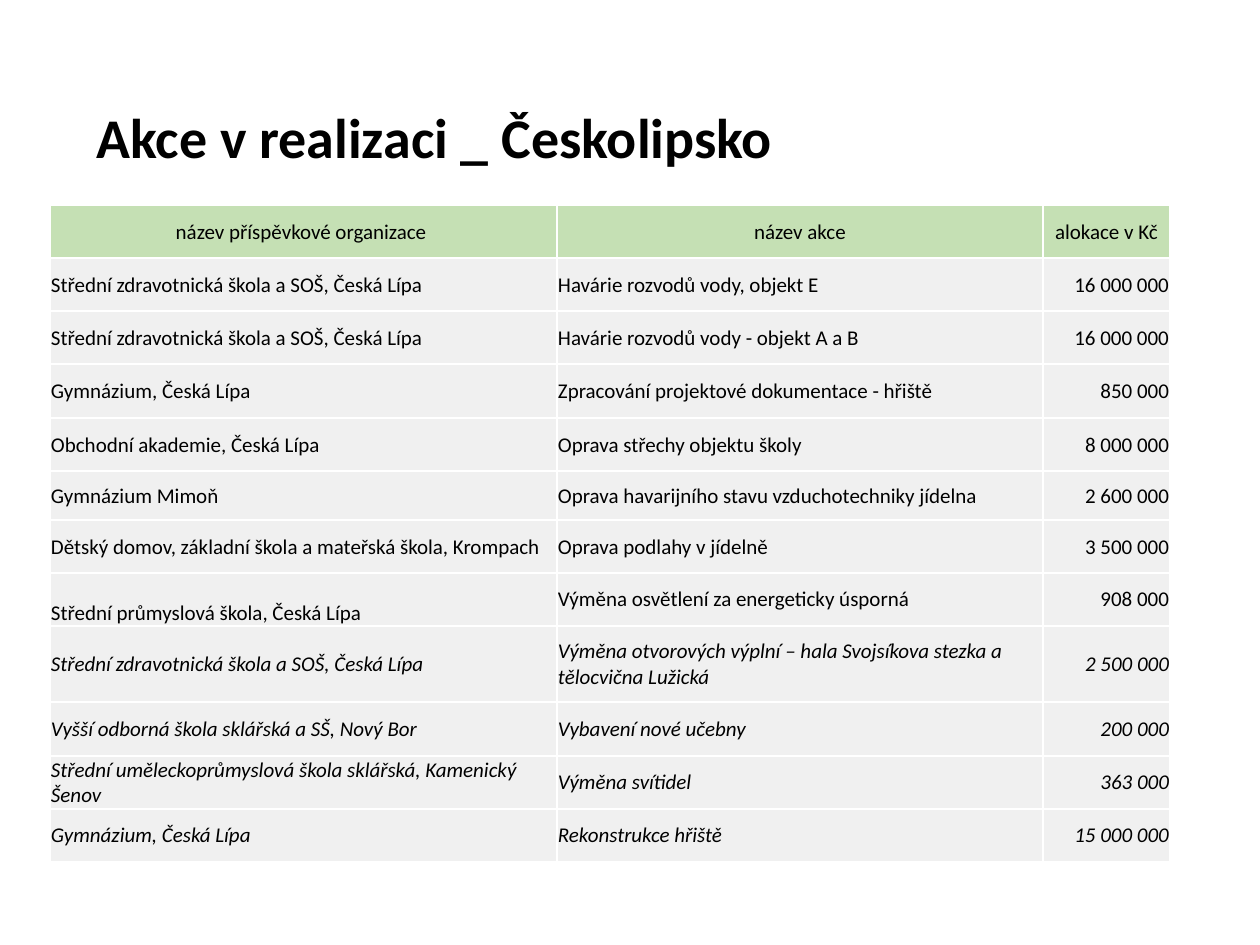
"""Build the slide listing projects under way in the Česká Lípa region."""
from lxml import etree
from pptx import Presentation
from pptx import util as u
from pptx.dml.color import RGBColor
from pptx.enum import text
from pptx.oxml.ns import qn

TITLE = "Akce v realizaci _ Českolipsko"
HEAD = ("název příspěvkové organizace ", "název akce", "alokace v Kč")
ACTIVE = [
    ("Střední zdravotnická škola a SOŠ, Česká Lípa", "Havárie rozvodů vody, objekt E", "16 000 000"),
    ("Střední zdravotnická škola a SOŠ, Česká Lípa", "Havárie rozvodů vody - objekt A a B", "16 000 000"),
    ("Gymnázium, Česká Lípa", "Zpracování projektové dokumentace - hřiště", "850 000"),
    ("Obchodní akademie, Česká Lípa", "Oprava střechy objektu školy", "8 000 000"),
    ("Gymnázium Mimoň", "Oprava havarijního stavu vzduchotechniky jídelna", "2 600 000"),
    ("Dětský domov, základní škola a mateřská škola, Krompach", "Oprava podlahy v jídelně", "3 500 000"),
    ("Střední průmyslová škola, Česká Lípa", "Výměna osvětlení za energeticky úsporná", "908 000"),
]
PLANNED = [
    ("Střední zdravotnická škola a SOŠ, Česká Lípa",
     "Výměna otvorových výplní – hala Svojsíkova stezka a tělocvična Lužická", "2 500 000"),
    ("Vyšší odborná škola sklářská a SŠ, Nový Bor", "Vybavení nové učebny", "200 000"),
    ("Střední uměleckoprůmyslová škola sklářská, Kamenický Šenov", "Výměna svítidel", "363 000"),
    ("Gymnázium, Česká Lípa", "Rekonstrukce hřiště", "15 000 000"),
]
ROWS = [HEAD] + ACTIVE + PLANNED
WIDTHS = (507, 486, 127)
HEIGHTS = (53, 53, 53, 54, 53, 49, 53, 53, 76, 54, 53, 53)
LOW = (7, 0)
LEFT, CENTER, RIGHT = text.PP_ALIGN.LEFT, text.PP_ALIGN.CENTER, text.PP_ALIGN.RIGHT


def px(n):
    return u.Emu(round(n * 914400 / 126))


def color(code):
    return RGBColor.from_string(code)


def write(frame, words, size=12, bold=False, italic=False, align=LEFT):
    frame.word_wrap = True
    para = frame.paragraphs[0]
    para.alignment = align
    run = para.add_run()
    run.text = words
    font = run.font
    font.name, font.size, font.bold, font.italic = "Calibri", u.Pt(size), bold, italic
    font.color.rgb = color("000000")


def edge(cell, code):
    props = cell._tc.get_or_add_tcPr()
    for spot, side in enumerate(("lnL", "lnR", "lnT", "lnB")):
        line = etree.Element(qn("a:" + side), w=str(u.Pt(1)))
        fill = etree.SubElement(line, qn("a:solidFill"))
        etree.SubElement(fill, qn("a:srgbClr"), val=code)
        props.insert(spot, line)


def main():
    deck = Presentation()
    deck.slide_width, deck.slide_height = px(1260), px(945)
    slide = deck.slides.add_slide(deck.slide_layouts[6])

    title = slide.shapes.add_textbox(px(84), px(96), px(1052), px(81))
    write(title.text_frame, TITLE, size=32, bold=True)

    table = slide.shapes.add_table(len(ROWS), len(WIDTHS), px(50), px(205),
                                   px(sum(WIDTHS)), px(sum(HEIGHTS))).table
    table.first_row = table.horz_banding = False
    for col, width in zip(table.columns, WIDTHS):
        col.width = px(width)
    for r, (row, height) in enumerate(zip(ROWS, HEIGHTS)):
        table.rows[r].height = px(height)
        for c, words in enumerate(row):
            cell = table.cell(r, c)
            cell.margin_left = cell.margin_right = cell.margin_top = px(1)
            cell.margin_bottom = 0
            cell.vertical_anchor = text.MSO_ANCHOR.BOTTOM if (r, c) == LOW else text.MSO_ANCHOR.MIDDLE
            cell.fill.solid()
            cell.fill.fore_color.rgb = color("F0F0F0" if r else "C5E0B4")
            edge(cell, "FFFFFF")
            align = (LEFT, LEFT, RIGHT)[c] if r else CENTER
            write(cell.text_frame, words, italic=r > len(ACTIVE), align=align)
    deck.save("out.pptx")


if __name__ == "__main__":
    main()
